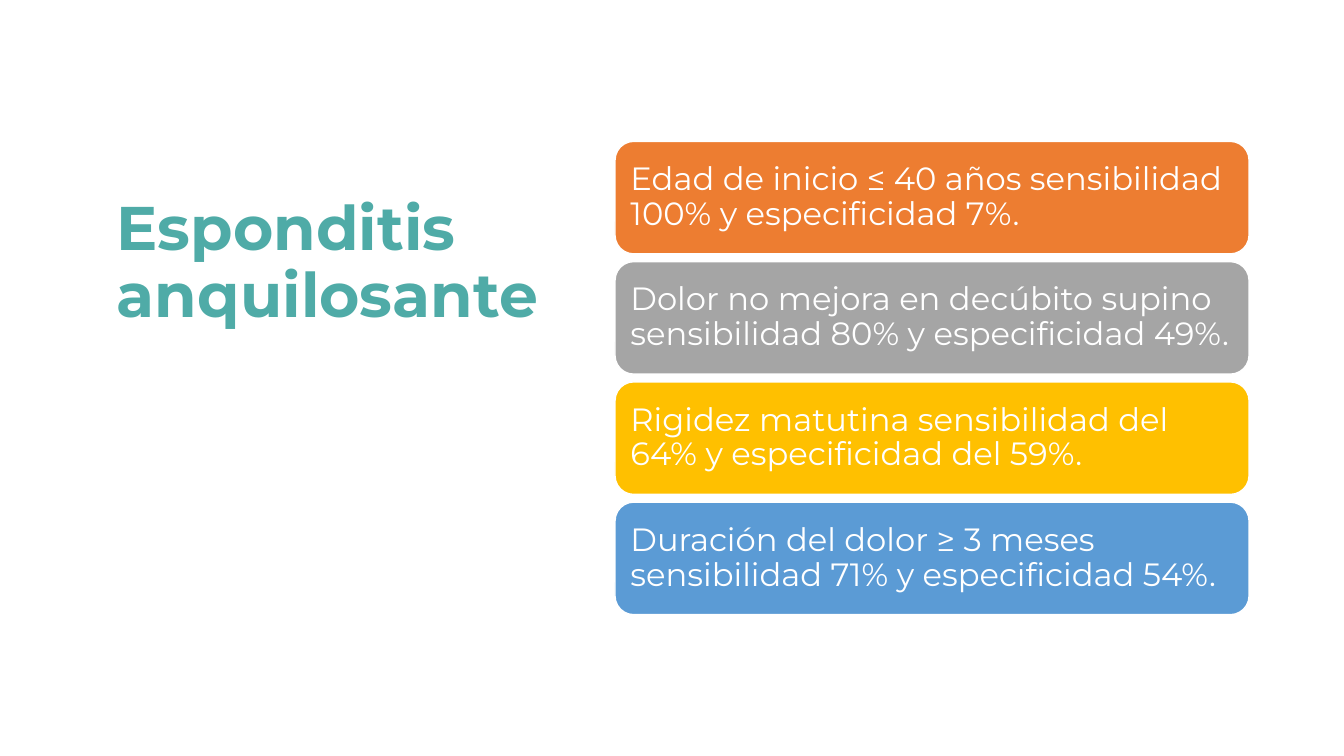
import pptx
import pptx.util
import pptx.dml.color
import pptx.enum.shapes
import pptx.enum.text

Pt = pptx.util.Pt
RGB = pptx.dml.color.RGBColor
TEAL = RGB(0x4F, 0xAB, 0xA7)
WHITE = RGB(0xFF, 0xFF, 0xFF)
ORANGE = RGB(0xED, 0x7D, 0x31)
GRAY = RGB(0xA5, 0xA5, 0xA5)
GOLD = RGB(0xFF, 0xC0, 0x00)
BLUE = RGB(0x5B, 0x9B, 0xD5)

SIGNS = [
    ("Edad de inicio ≤ 40 años sensibilidad 100% y especificidad 7%.", ORANGE),
    ("Dolor no mejora en decúbito supino sensibilidad 80% y especificidad 49%.", GRAY),
    ("Rigidez matutina sensibilidad del 64% y especificidad del 59%.", GOLD),
    ("Duración del dolor ≥ 3 meses sensibilidad 71% y especificidad 54%.", BLUE),
]
LEFT, TOP, WIDTH, HEIGHT, PITCH = 439.3, 101, 452.9, 80.4, 85.9


def assign(target, values):
    for name, value in values.items():
        setattr(target, name, value)


class Deck:
    face = "Montserrat"
    frame = {
        "word_wrap": True,
        "auto_size": pptx.enum.text.MSO_AUTO_SIZE.NONE,
        "vertical_anchor": pptx.enum.text.MSO_ANCHOR.MIDDLE,
        "margin_left": Pt(7.2),
        "margin_right": Pt(7.2),
        "margin_top": Pt(7.2),
        "margin_bottom": Pt(7.2),
    }
    para = {"alignment": pptx.enum.text.PP_ALIGN.LEFT, "line_spacing": 0.9}

    def __init__(self):
        self.show = pptx.Presentation()
        assign(self.show, {"slide_width": Pt(960), "slide_height": Pt(540)})
        self.slide = self.show.slides.add_slide(self.show.slide_layouts[5])

    def label(self, shape, text, size, color, bold=False):
        frame = shape.text_frame
        assign(frame, self.frame)
        frame.text = text
        para = frame.paragraphs[0]
        assign(para, self.para)
        font = para.runs[0].font
        assign(font, {"name": self.face, "size": Pt(size), "bold": bold})
        font.color.rgb = color

    def title(self, text, left, top, width, height):
        shape = self.slide.shapes.title
        assign(shape, {"left": Pt(left), "top": Pt(top),
                       "width": Pt(width), "height": Pt(height)})
        self.label(shape, text, 44, TEAL, True)

    def card(self, text, fill, left, top, width, height):
        shape = self.slide.shapes.add_shape(
            pptx.enum.shapes.MSO_SHAPE.ROUNDED_RECTANGLE,
            Pt(left), Pt(top), Pt(width), Pt(height))
        shape.shadow.inherit = False
        shape.fill.solid()
        shape.fill.fore_color.rgb = fill
        shape.line.color.rgb = WHITE
        shape.line.width = Pt(1)
        self.label(shape, text, 23, WHITE)


def main():
    deck = Deck()
    deck.title("Esponditis anquilosante", 76.3, 0, 326.9, 377.3)
    for row, (text, fill) in enumerate(SIGNS):
        deck.card(text, fill, LEFT, TOP + row * PITCH, WIDTH, HEIGHT)
    deck.show.save("out.pptx")


if __name__ == "__main__":
    main()
